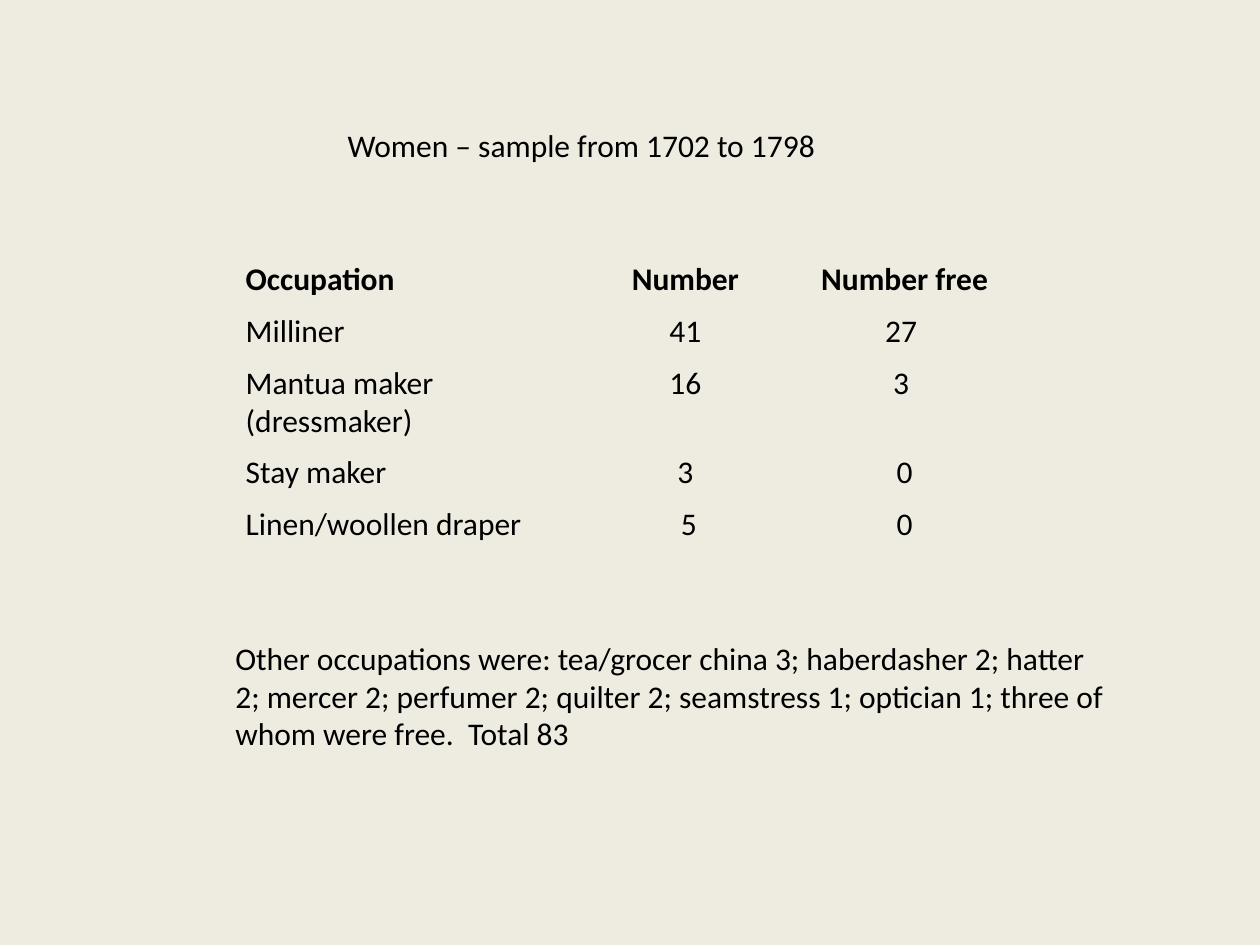
from dataclasses import dataclass

from pptx import Presentation
from pptx.dml.color import RGBColor
from pptx.enum.text import MSO_ANCHOR, MSO_AUTO_SIZE, PP_ALIGN
from pptx.util import Inches, Pt

LEFT, CENTER = PP_ALIGN.LEFT, PP_ALIGN.CENTER
TOP = MSO_ANCHOR.TOP
NO_AUTOFIT = MSO_AUTO_SIZE.NONE
TITLE_ONLY_LAYOUT = 5
PLAIN_TABLE_STYLE = "{2D5ABB26-0587-4C30-8999-92F81FD0307C}"


@dataclass(frozen=True)
class Theme:
    font: str = "Calibri"
    size: int = 18
    ink: RGBColor = RGBColor(0x00, 0x00, 0x00)
    paper: RGBColor = RGBColor(0xEE, 0xEC, 0xE1)


class PageBuilder:
    def __init__(self, deck, theme):
        self.theme = theme
        self.page = deck.slides.add_slide(deck.slide_layouts[TITLE_ONLY_LAYOUT])
        fill = self.page.background.fill
        fill.solid()
        fill.fore_color.rgb = theme.paper

    def set_text(self, frame, text, align=LEFT, bold=False):
        frame.text = text
        for para in frame.paragraphs:
            para.alignment = align
            for span in para.runs:
                span.font.name = self.theme.font
                span.font.size = Pt(self.theme.size)
                span.font.bold = bold
                span.font.color.rgb = self.theme.ink

    def title(self, text, left, top, width, height):
        box = self.page.shapes.title
        box.left, box.top = Inches(left), Inches(top)
        box.width, box.height = Inches(width), Inches(height)
        frame = box.text_frame
        frame.vertical_anchor = TOP
        frame.auto_size = NO_AUTOFIT
        self.set_text(frame, text, CENTER)

    def note(self, text, left, top, width, height):
        box = self.page.shapes.add_textbox(
            Inches(left), Inches(top), Inches(width), Inches(height))
        box.text_frame.word_wrap = True
        self.set_text(box.text_frame, text)

    def table(self, rows, left, top, column_widths, row_heights):
        """Draw a table without grid lines: bold header, first column left-aligned."""
        frame = self.page.shapes.add_table(
            len(rows), len(column_widths), Inches(left), Inches(top),
            Inches(sum(column_widths)), Inches(sum(row_heights)))
        table = frame.table
        table.horz_banding = False
        table._tbl.tblPr.find("{*}tableStyleId").text = PLAIN_TABLE_STYLE
        for column, width in zip(table.columns, column_widths):
            column.width = Inches(width)
        for row, height in zip(table.rows, row_heights):
            row.height = Inches(height)
        for row_index, values in enumerate(rows):
            for column_index, value in enumerate(values):
                cell = table.cell(row_index, column_index)
                cell.fill.background()
                self.set_text(cell.text_frame, value,
                              align=CENTER if column_index else LEFT,
                              bold=row_index == 0)


def main():
    deck = Presentation()
    deck.slide_width, deck.slide_height = Inches(10), Inches(7.5)
    builder = PageBuilder(deck, Theme())

    occupations = [
        ("Occupation", "Number", "Number free"),
        ("Milliner", "41", "27 "),
        ("Mantua maker (dressmaker)", "16", "3 "),
        ("Stay maker", " 3 ", "0"),
        ("Linen/woollen draper", " 5", "0"),
    ]
    builder.table(occupations, 1.85, 2.02,
                  column_widths=[2.74, 1.7, 1.78],
                  row_heights=[0.41, 0.41, 0.7, 0.41, 0.41])
    builder.title("Women – sample from 1702 to 1798", 1.78, 0.95, 5.67, 0.71)
    builder.note(
        "Other occupations were: tea/grocer china 3; haberdasher 2; hatter 2; "
        "mercer 2; perfumer 2; quilter 2; seamstress 1; optician 1; "
        "three of whom were free.  Total 83",
        1.77, 5.02, 7.17, 1.01)

    deck.save("out.pptx")


if __name__ == "__main__":
    main()
